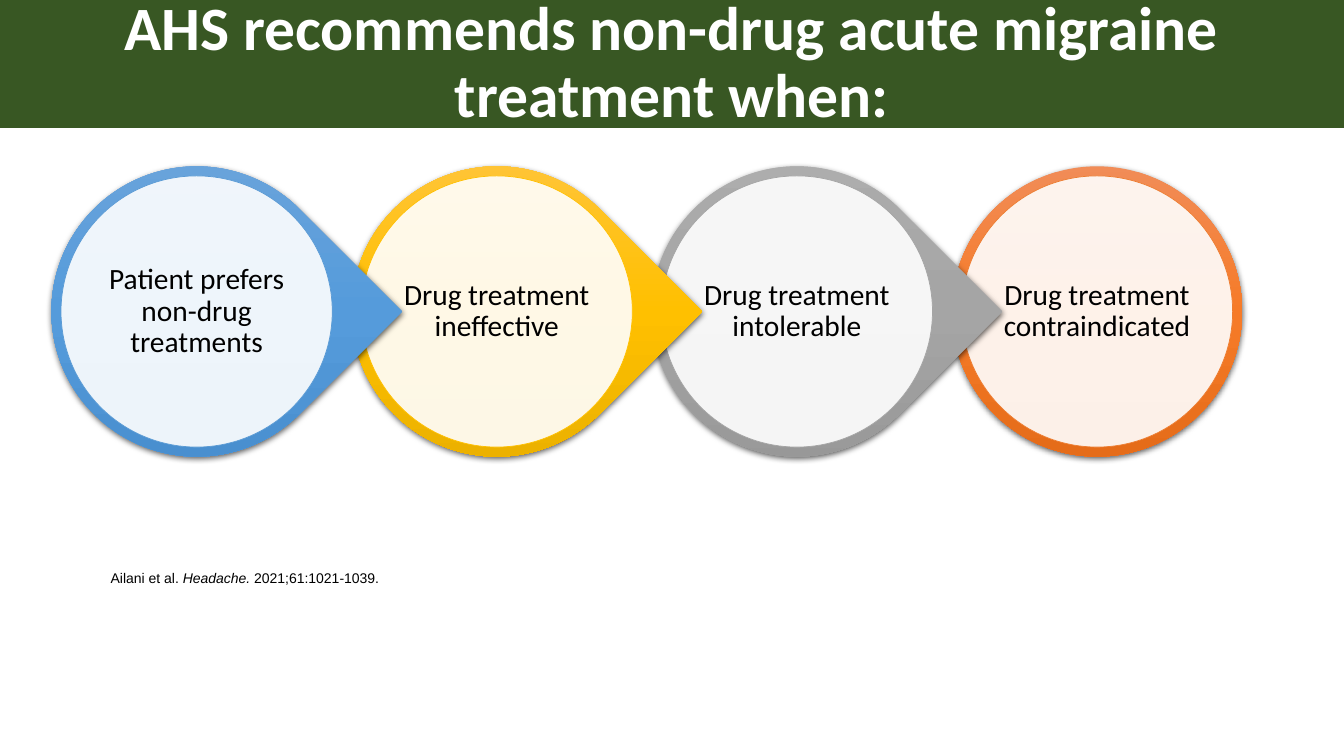
from lxml import etree
from pptx import Presentation
from pptx.dml.color import RGBColor
from pptx.enum.shapes import MSO_SHAPE as Shape
from pptx.enum.text import MSO_ANCHOR as Anchor, PP_ALIGN as Align
from pptx.oxml.ns import qn
from pptx.util import Inches, Pt

WIDTH, HEIGHT = 13.33, 7.5
COLORS = {"band": "385723", "white": "FFFFFF", "black": "000000"}

# Text, disc outline, and the rim's top, middle and bottom colours
REASONS = [
    ("Patient prefers non-drug treatments", "5B9BD5", ("71A6DB", "559BDB", "448ACA")),
    ("Drug treatment ineffective", "FFC000", ("FFC64B", "FFC000", "E3AB00")),
    ("Drug treatment intolerable", "A5A5A5", ("AFAFAF", "A5A5A5", "939393")),
    ("Drug treatment contraindicated", "ED7D31", ("F18C57", "F67B28", "E56C19")),
]
FIRST_CENTER, LAST_CENTER, CENTER_Y = 1.95, 10.88, 3.09
PITCH = (LAST_CENTER - FIRST_CENTER) / (len(REASONS) - 1)
RIM, DISC, LABEL = 2.88, 2.69, 1.92


def rgb(value):
    return RGBColor.from_string(value)


def centered_square(center_x, size):
    return (Inches(center_x - size / 2), Inches(CENTER_Y - size / 2),
            Inches(size), Inches(size))


def add_color(parent, value, alpha=None):
    color = etree.SubElement(parent, qn("a:srgbClr"), val=value)
    if alpha is not None:
        etree.SubElement(color, qn("a:alpha"), val=str(alpha * 1000))


def fill_gradient(shape, colors):
    """Fill from top to bottom, whatever the shape's rotation."""
    shape.fill.gradient()
    gradient = shape._element.spPr.find(qn("a:gradFill"))
    gradient.set("rotWithShape", "0")
    for child in list(gradient):
        gradient.remove(child)
    stops = etree.SubElement(gradient, qn("a:gsLst"))
    for index, value in enumerate(colors):
        position = 100000 * index // (len(colors) - 1)
        add_color(etree.SubElement(stops, qn("a:gs"), pos=str(position)), value)
    etree.SubElement(gradient, qn("a:lin"), ang="5400000", scaled="0")


def add_drop_shadow(shape):
    shape.shadow.inherit = False
    effects = shape._element.spPr.find(qn("a:effectLst"))
    shadow = etree.SubElement(
        effects, qn("a:outerShdw"), blurRad=str(Pt(4.5)), dist=str(Pt(1.5)),
        dir="5400000", algn="ctr", rotWithShape="0")
    add_color(shadow, COLORS["black"], 63)


def set_text(shape, text, size, color, font, bold=False,
             align=Align.CENTER, anchor=Anchor.MIDDLE):
    frame = shape.text_frame
    frame.text = text
    frame.word_wrap = True
    frame.vertical_anchor = anchor
    paragraph = frame.paragraphs[0]
    paragraph.alignment = align
    paragraph.line_spacing = 0.9
    for run in paragraph.runs:
        run.font.name, run.font.size, run.font.bold = font, Pt(size), bold
        run.font.color.rgb = rgb(color)
    return paragraph


def add_title(slide, text):
    band = slide.shapes.add_shape(Shape.RECTANGLE, 0, 0, Inches(WIDTH), Inches(1.27))
    band.shadow.inherit = False
    band.fill.solid()
    band.fill.fore_color.rgb = rgb(COLORS["band"])
    band.line.fill.background()
    set_text(band, text, 44, COLORS["white"], "Calibri", bold=True)


def add_reason(slide, center_x, text, outline, rim_colors, pointed):
    shapes = slide.shapes
    rim = shapes.add_shape(Shape.TEAR if pointed else Shape.OVAL,
                           *centered_square(center_x, RIM))
    rim.rotation = 45 if pointed else 0
    fill_gradient(rim, rim_colors)
    rim.line.fill.background()
    add_drop_shadow(rim)

    disc = shapes.add_shape(Shape.OVAL, *centered_square(center_x, DISC))
    disc.shadow.inherit = False
    disc.fill.solid()
    disc.fill.fore_color.rgb = rgb(COLORS["white"])
    white = disc._element.spPr.find(qn("a:solidFill")).find(qn("a:srgbClr"))
    etree.SubElement(white, qn("a:alpha"), val="90000")
    disc.line.color.rgb = rgb(outline)
    disc.line.width = Pt(0.5)

    label = shapes.add_textbox(*centered_square(center_x, LABEL))
    frame = label.text_frame
    frame.margin_left = frame.margin_right = Inches(0.03)
    frame.margin_top = frame.margin_bottom = Inches(0.03)
    set_text(label, text, 21, COLORS["black"], "Calibri")


def add_citation(slide, authors, journal, issue):
    box = slide.shapes.add_textbox(0, Inches(5.47), Inches(12.7), Inches(0.4))
    paragraph = set_text(box, authors, 10, COLORS["black"], "Arial",
                         align=Align.LEFT, anchor=Anchor.BOTTOM)
    paragraph._p.get_or_add_pPr().set("marL", str(Inches(1)))
    for text, italic in ((journal, True), (issue, False)):
        run = paragraph.add_run()
        run.text = text
        run.font.name, run.font.size, run.font.italic = "Arial", Pt(10), italic
        run.font.color.rgb = rgb(COLORS["black"])


def main():
    presentation = Presentation()
    presentation.slide_width = Inches(WIDTH)
    presentation.slide_height = Inches(HEIGHT)
    slide = presentation.slides.add_slide(presentation.slide_layouts[6])

    # Right to left, so that each point lies over the next circle
    last = len(REASONS) - 1
    for index in range(last, -1, -1):
        add_reason(slide, FIRST_CENTER + index * PITCH, *REASONS[index],
                   pointed=index < last)
    add_citation(slide, "Ailani et al. ", "Headache. ", "2021;61:1021-1039.")
    add_title(slide, "AHS recommends non-drug acute migraine treatment when:")
    presentation.save("out.pptx")


if __name__ == "__main__":
    main()
